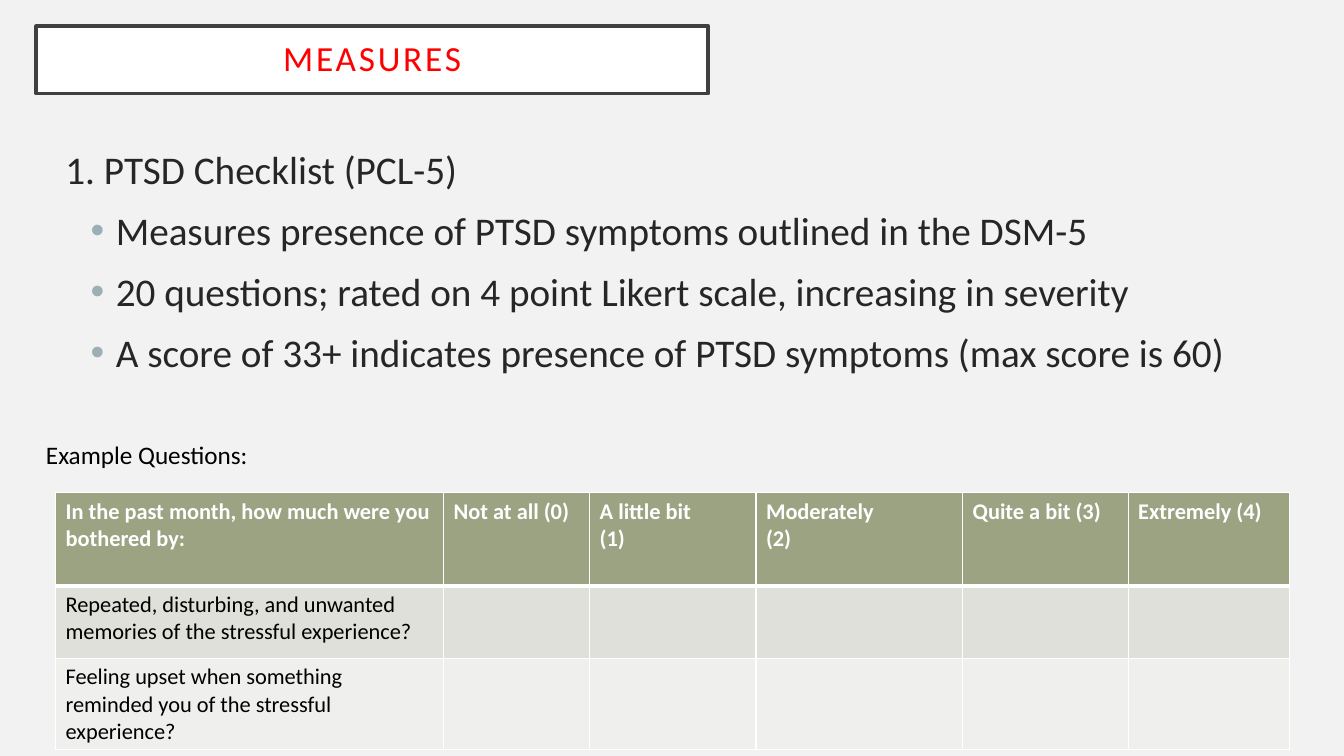
from pptx import Presentation
from pptx.dml.color import RGBColor
from pptx.enum.shapes import MSO_SHAPE
from pptx.enum.text import MSO_ANCHOR, PP_ALIGN
from pptx.oxml import parse_xml
from pptx.oxml.ns import nsdecls
from pptx.util import Cm, Pt

BODY = {"size": Pt(28), "name": "Calibri"}
CELL = {"size": Pt(16), "name": "Calibri"}
NOTE = {"size": Pt(18), "name": "Calibri"}
HEAD = {"size": Pt(25.2), "name": "Calibri"}

POINTS = [
    "Measures presence of PTSD symptoms outlined in the DSM-5",
    "20 questions; rated on 4 point Likert scale, increasing in severity",
    "A score of 33+ indicates presence of PTSD symptoms (max score is 60)",
]
WIDTHS = [9.78, 3.68, 4.19, 5.21, 4.17, 4.06]
ROWS = [
    (2.34, "9CA383", "FFFFFF", [
        "In the past month, how much were you bothered by:", "Not at all (0)",
        "A little bit\n(1)", "Moderately\n(2)", "Quite a bit (3)", "Extremely (4)"]),
    (1.83, "DEE0D9", "000000", [
        "Repeated, disturbing, and unwanted memories of the stressful experience?"]),
    (1.12, "EFF0ED", "000000", [
        "Feeling upset when something reminded you of the stressful experience?"]),
]


def paint(target, color):
    """Give a fill one solid colour."""
    target.solid()
    target.fore_color.rgb = RGBColor.from_string(color)


def apply(target, style):
    """Set each attribute in a dict of format values."""
    for name, value in style.items():
        setattr(target, name, value)


def write(para, text, style, color):
    """Add a styled run to a paragraph."""
    run = para.add_run()
    run.text = text
    apply(run.font, style)
    paint(run.font.fill, color)
    return run


def bullet(para):
    """Give a paragraph a hanging round bullet."""
    props = para._p.get_or_add_pPr()
    props.set("marL", str(Cm(1.27)))
    props.set("indent", str(Cm(-0.635)))
    props.append(parse_xml(
        f'<a:buClr {nsdecls("a")}><a:srgbClr val="9BAFB5"/></a:buClr>'))
    props.append(parse_xml(f'<a:buFont {nsdecls("a")} typeface="Arial"/>'))
    props.append(parse_xml(f'<a:buChar {nsdecls("a")} char="•"/>'))


def edge(cell, sides):
    """Draw white borders of the given widths on a cell."""
    props = cell._tc.get_or_add_tcPr()
    for spot, (side, width) in enumerate(sides.items()):
        props.insert(spot, parse_xml(
            f'<a:ln{side} {nsdecls("a")} w="{Pt(width)}"><a:solidFill>'
            f'<a:srgbClr val="FFFFFF"/></a:solidFill></a:ln{side}>'))


def title(slide):
    """Add the framed title."""
    box = slide.shapes.add_shape(
        MSO_SHAPE.RECTANGLE, Cm(0.91), Cm(0.66), Cm(16.94), Cm(1.7))
    box.shadow.inherit = False
    paint(box.fill, "FFFFFF")
    paint(box.line.fill, "404040")
    box.line.width = Pt(2.5)
    frame = box.text_frame
    pad = Cm(0.51)
    apply(frame, {"margin_left": pad, "margin_right": pad, "margin_top": pad,
                  "margin_bottom": pad, "word_wrap": True,
                  "vertical_anchor": MSO_ANCHOR.MIDDLE})
    para = frame.paragraphs[0]
    apply(para, {"alignment": PP_ALIGN.CENTER, "line_spacing": 0.9})
    run = write(para, "MEASURES", HEAD, "FF0000")
    run.font._element.set("spc", "200")


def label(slide, place, text, style, color):
    """Add a wrapped text box and return its frame."""
    frame = slide.shapes.add_textbox(*map(Cm, place)).text_frame
    frame.word_wrap = True
    write(frame.paragraphs[0], text, style, color)
    return frame


def body(slide):
    """Add the checklist heading and its points."""
    frame = label(slide, (1.4, 3.53, 31.9, 14.83),
                  "1. PTSD Checklist (PCL-5)", BODY, "262626")
    frame.paragraphs[0].space_before = Pt(10)
    for point in POINTS:
        para = frame.add_paragraph()
        apply(para, {"level": 1, "space_before": Pt(10)})
        bullet(para)
        write(para, point, BODY, "262626")


def grid(slide):
    """Add the table of example questions."""
    table = slide.shapes.add_table(
        len(ROWS), len(WIDTHS), Cm(1.4), Cm(12.42),
        Cm(sum(WIDTHS)), Cm(sum(row[0] for row in ROWS))).table
    for col, width in zip(table.columns, WIDTHS):
        col.width = Cm(width)
    for y, (height, fill, ink, texts) in enumerate(ROWS):
        table.rows[y].height = Cm(height)
        for x in range(len(WIDTHS)):
            cell = table.cell(y, x)
            paint(cell.fill, fill)
            edge(cell, {"L": 1, "R": 1, "T": 3 if y == 1 else 1,
                        "B": 3 if y == 0 else 1})
            if x < len(texts):
                frame = cell.text_frame
                for n, line in enumerate(texts[x].split("\n")):
                    para = frame.add_paragraph() if n else frame.paragraphs[0]
                    write(para, line, {**CELL, "bold": y == 0}, ink)


def main():
    """Build and save the slide."""
    deck = Presentation()
    apply(deck, {"slide_width": Cm(33.87), "slide_height": Cm(19.05)})
    slide = deck.slides.add_slide(deck.slide_layouts[6])
    paint(slide.background.fill, "F2F2F2")
    title(slide)
    body(slide)
    grid(slide)
    label(slide, (0.91, 10.95, 9.25, 1.04), "Example Questions:", NOTE, "000000")
    deck.save("out.pptx")


if __name__ == "__main__":
    main()
